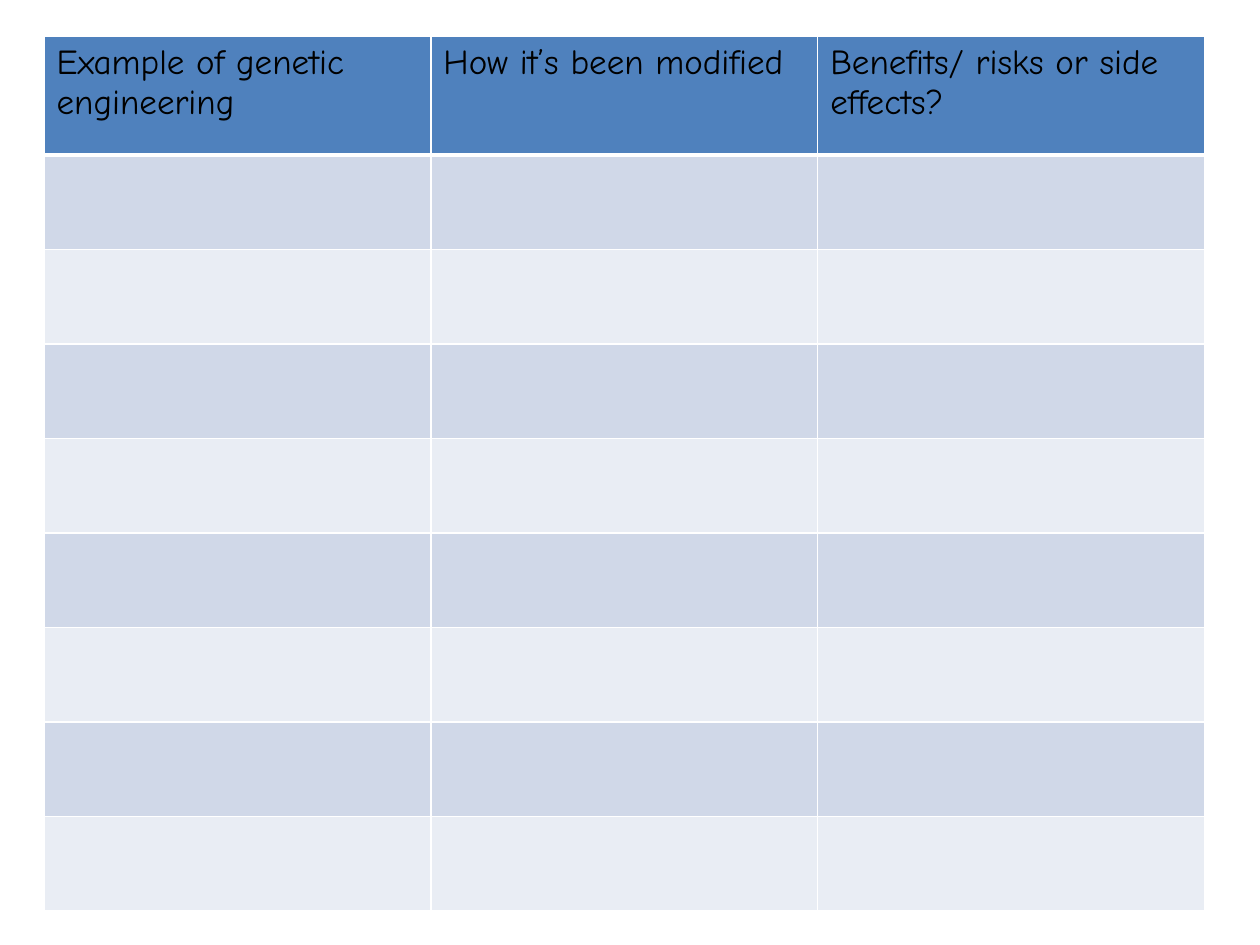
from dataclasses import dataclass

from lxml import etree
from pptx import Presentation
from pptx.dml.color import RGBColor
from pptx.oxml.ns import qn
from pptx.table import Table, _Cell
from pptx.util import Emu, Pt

EMU_PER_PX = 9144
EMU_PER_POINT = 12700
BLANK_LAYOUT = 6

SLIDE_WIDTH, SLIDE_HEIGHT = 1000, 750
TABLE_LEFT, TABLE_TOP = 35, 29
COLUMN_WIDTH = 307
HEADER_HEIGHT, BODY_HEIGHT = 94, 75
BODY_ROWS = 8

HEADER_FILL = "4F81BD"
BODY_FILLS = ("D0D8E8", "E9EDF4")
BORDER_COLOUR = "FFFFFF"
THIN, THICK = 1, 3
TEXT_COLOUR = "000000"
HEADER_FONT = {"name": "Comic Neue", "size": Pt(20), "bold": False}
HEADINGS = (
    "Example of genetic engineering",
    "How it’s been modified",
    "Benefits/ risks or side effects?",
)


@dataclass(frozen=True)
class TableRow:
    height: int
    fill: str
    top_border: int = THIN
    bottom_border: int = THIN
    texts: tuple[str, ...] = ("",) * len(HEADINGS)


def px(length: int) -> Emu:
    return Emu(length * EMU_PER_PX)


def colour(value: str) -> RGBColor:
    return RGBColor.from_string(value)


def draw_borders(cell: _Cell, row: TableRow) -> None:
    properties = cell._tc.get_or_add_tcPr()
    widths = {"L": THIN, "R": THIN, "T": row.top_border, "B": row.bottom_border}
    for side, width in widths.items():
        line = etree.SubElement(properties, qn(f"a:ln{side}"), w=str(width * EMU_PER_POINT))
        fill = etree.SubElement(line, qn("a:solidFill"))
        etree.SubElement(fill, qn("a:srgbClr"), val=BORDER_COLOUR)


def write_heading(cell: _Cell, text: str) -> None:
    span = cell.text_frame.paragraphs[0].add_run()
    span.text = text
    for attribute, value in HEADER_FONT.items():
        setattr(span.font, attribute, value)
    span.font.color.rgb = colour(TEXT_COLOUR)


def draw_row(table: Table, index: int, row: TableRow) -> None:
    table.rows[index].height = px(row.height)
    for cell, text in zip(table.rows[index].cells, row.texts):
        draw_borders(cell, row)
        cell.fill.solid()
        cell.fill.fore_color.rgb = colour(row.fill)
        if text:
            write_heading(cell, text)


def main() -> None:
    deck = Presentation()
    deck.slide_width, deck.slide_height = px(SLIDE_WIDTH), px(SLIDE_HEIGHT)
    page = deck.slides.add_slide(deck.slide_layouts[BLANK_LAYOUT])

    rows = [TableRow(HEADER_HEIGHT, HEADER_FILL, bottom_border=THICK, texts=HEADINGS)]
    for index in range(BODY_ROWS):
        fill = BODY_FILLS[index % len(BODY_FILLS)]
        rows.append(TableRow(BODY_HEIGHT, fill, top_border=THIN if index else THICK))

    table = page.shapes.add_table(
        len(rows),
        len(HEADINGS),
        px(TABLE_LEFT),
        px(TABLE_TOP),
        px(COLUMN_WIDTH * len(HEADINGS)),
        px(sum(row.height for row in rows)),
    ).table
    for column in table.columns:
        column.width = px(COLUMN_WIDTH)
    for index, row in enumerate(rows):
        draw_row(table, index, row)

    deck.save("out.pptx")


if __name__ == "__main__":
    main()
